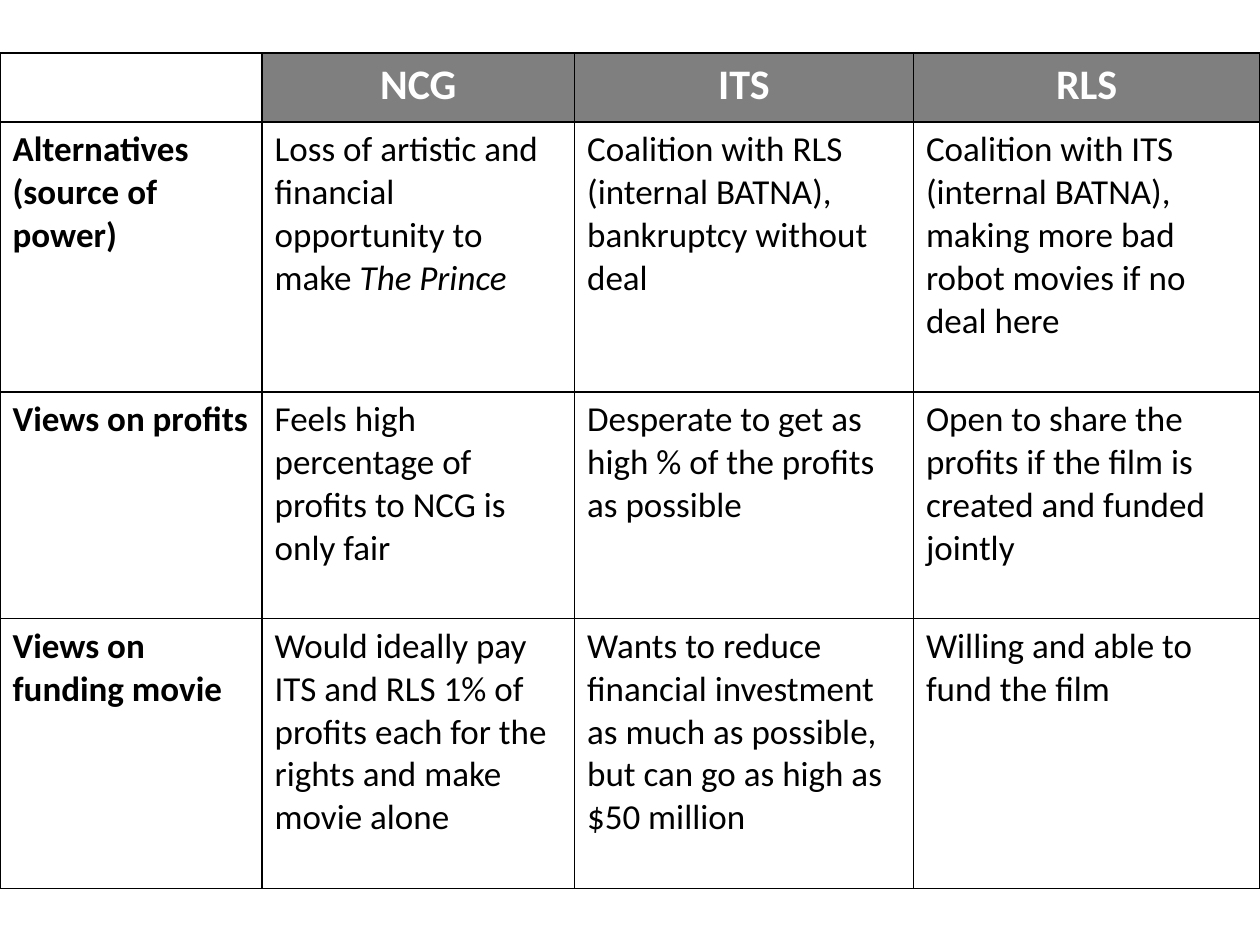
"""Build a slide comparing the positions of three negotiating parties."""
from lxml.etree import SubElement
from pptx import Presentation
from pptx.dml.color import RGBColor
from pptx.enum.text import PP_ALIGN as Align
from pptx.oxml import parse_xml
from pptx.oxml.ns import nsdecls, qn
from pptx.util import Inches, Pt

COLORS = {"ink": "000000", "paper": "FFFFFF"}
FONT = "Calibri"
COLUMN_WIDTHS = [2.08, 2.48, 2.69, 2.75]
ROW_HEIGHTS = [0.55, 2.14, 1.8, 2.14]
PARTIES = ["NCG", "ITS", "RLS"]
TOPICS = [
    (["Alternatives", "(source of power)"], [
        [("Loss of artistic and financial opportunity to make ", False),
         ("The Prince", True)],
        [("Coalition with RLS (internal BATNA), bankruptcy without deal", False)],
        [("Coalition with ITS (internal BATNA), making more bad robot movies "
          "if no deal here", False)],
    ]),
    (["Views on profits"], [
        [("Feels high percentage of profits to NCG is only fair", False)],
        [("Desperate to get as high % of the profits as possible", False)],
        [("Open to share the profits if the film is created and funded jointly",
          False)],
    ]),
    (["Views on funding movie"], [
        [("Would ideally pay ITS and RLS 1% of profits each for the rights "
          "and make movie alone", False)],
        [("Wants to reduce financial investment as much as possible, "
          "but can go as high as $50 million", False)],
        [("Willing and able to fund the film", False)],
    ]),
]


def add_run(paragraph, text, size=20, color="ink", bold=False, italic=False):
    """Append one formatted run to a paragraph."""
    run = paragraph.add_run()
    run.text = text
    font = run.font
    font.name, font.size, font.bold, font.italic = FONT, Pt(size), bold, italic
    font.color.rgb = RGBColor.from_string(COLORS[color])


def style_cell(cell, is_header):
    """Give a cell its fill and a thin border on all sides."""
    if is_header:
        cell.fill.solid()
        cell.fill.fore_color.rgb = RGBColor.from_string(COLORS["ink"])
        properties = cell._tc.get_or_add_tcPr()
        tint = properties.find(qn("a:solidFill"))[0]
        SubElement(tint, qn("a:alpha"), val="50000")
    else:
        cell.fill.background()
        properties = cell._tc.get_or_add_tcPr()
    for position, side in enumerate(["lnL", "lnR", "lnT", "lnB"]):
        border = parse_xml(
            f'<a:{side} {nsdecls("a")} w="{Pt(1)}"><a:solidFill>'
            f'<a:srgbClr val="{COLORS["ink"]}"/></a:solidFill></a:{side}>')
        properties.insert(position, border)


def fill_header(cell, party):
    """Write a party name in a header cell."""
    paragraph = cell.text_frame.paragraphs[0]
    paragraph.alignment = Align.CENTER
    add_run(paragraph, party, size=24, color="paper", bold=True)


def fill_topic(cell, lines):
    """Write a topic, one paragraph for each line."""
    frame = cell.text_frame
    for number, line in enumerate(lines):
        paragraph = frame.add_paragraph() if number else frame.paragraphs[0]
        add_run(paragraph, line, bold=True)


def fill_position(cell, phrases):
    """Write a party's position from its plain and italic phrases."""
    for text, italic in phrases:
        add_run(cell.text_frame.paragraphs[0], text, italic=italic)


def add_comparison(slide):
    """Add the bordered table of topics against parties."""
    frame = slide.shapes.add_table(
        len(ROW_HEIGHTS), len(COLUMN_WIDTHS), Inches(0), Inches(0.42),
        Inches(sum(COLUMN_WIDTHS)), Inches(sum(ROW_HEIGHTS)))
    table = frame.table
    table.first_row = table.horz_banding = False
    for column, width in zip(table.columns, COLUMN_WIDTHS):
        column.width = Inches(width)
    for row, height in zip(table.rows, ROW_HEIGHTS):
        row.height = Inches(height)
    for r in range(len(ROW_HEIGHTS)):
        for c in range(len(COLUMN_WIDTHS)):
            style_cell(table.cell(r, c), is_header=r == 0 and c > 0)
    for c, party in enumerate(PARTIES, start=1):
        fill_header(table.cell(0, c), party)
    for r, (topic, positions) in enumerate(TOPICS, start=1):
        fill_topic(table.cell(r, 0), topic)
        for c, phrases in enumerate(positions, start=1):
            fill_position(table.cell(r, c), phrases)


def main():
    """Create and save the presentation."""
    deck = Presentation()
    deck.slide_width, deck.slide_height = Inches(10), Inches(7.5)
    add_comparison(deck.slides.add_slide(deck.slide_layouts[6]))
    deck.save("out.pptx")


if __name__ == "__main__":
    main()
